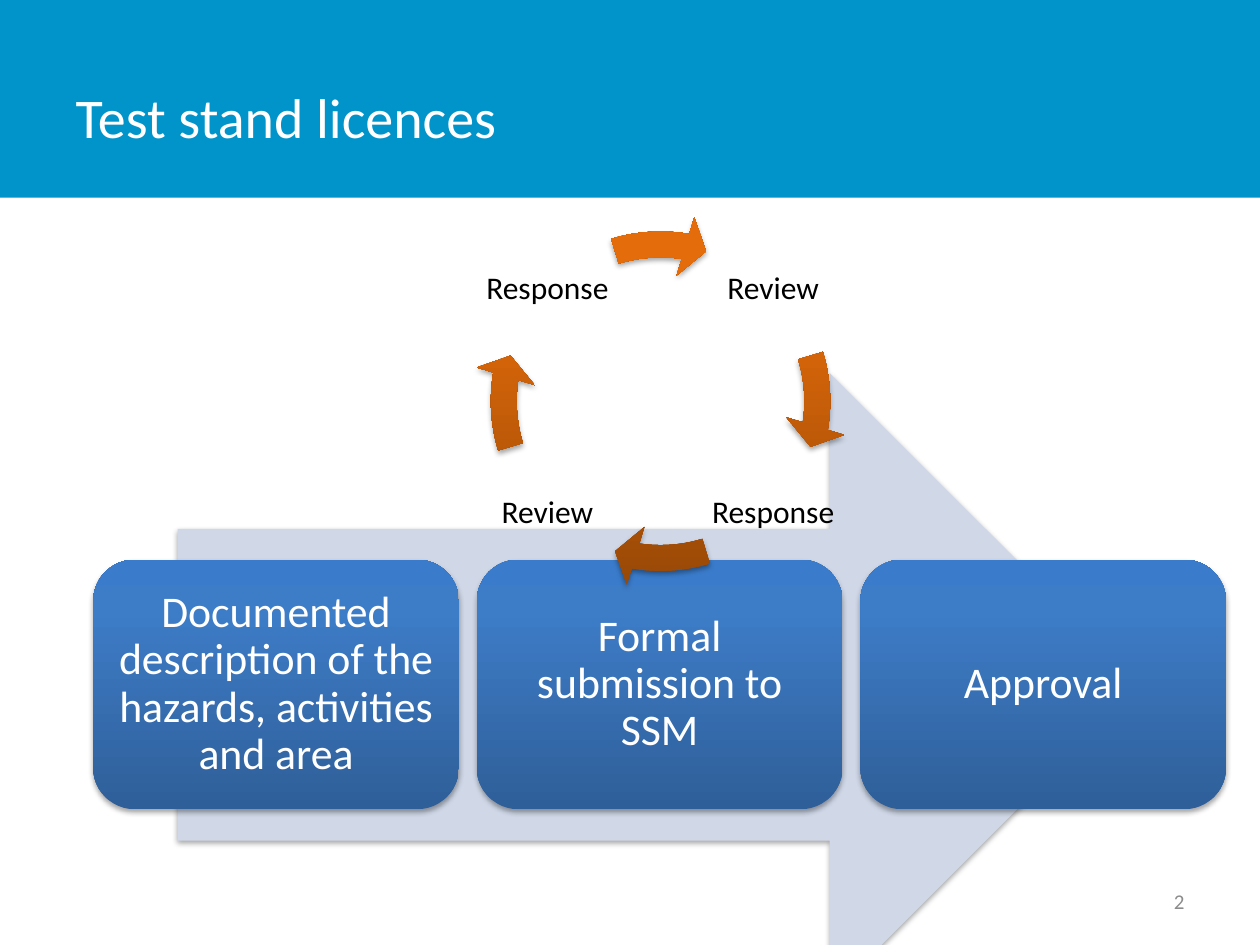
from lxml import etree
from pptx import Presentation
from pptx.dml.color import RGBColor
from pptx.enum.shapes import MSO_SHAPE
from pptx.enum.text import MSO_ANCHOR, PP_ALIGN
from pptx.util import Pt

RECT, ROUND = MSO_SHAPE.RECTANGLE, MSO_SHAPE.ROUNDED_RECTANGLE
ARROW, TURN = MSO_SHAPE.RIGHT_ARROW, MSO_SHAPE.CIRCULAR_ARROW
LEFT, MID, RIGHT = PP_ALIGN.LEFT, PP_ALIGN.CENTER, PP_ALIGN.RIGHT
NS = 'xmlns:a="http://schemas.openxmlformats.org/drawingml/2006/main"'
SHADE = f'''<a:effectLst {NS}><a:outerShdw blurRad="{Pt(3.1)}" dist="{Pt(1.8)}"
  dir="5400000" rotWithShape="0"><a:srgbClr val="000000"><a:alpha val="35000"/>
  </a:srgbClr></a:outerShdw></a:effectLst>'''
BLUE = ("2F5F99", "3D7CC7", "3A7CCB")
RUST = ("984807", "E46C0A", "E46C0A")
rgb = RGBColor.from_string


def paint(shape, hues):
    """Fill with an upward three-stop gradient or one colour, and add a shadow."""
    props = shape._element.spPr
    shape.line.fill.background()
    if len(hues) == 1:
        shape.fill.solid()
        shape.fill.fore_color.rgb = rgb(hues[0])
    else:
        stops = "".join(f'<a:gs pos="{pos}"><a:srgbClr val="{hue}"/></a:gs>'
                        for pos, hue in zip((0, 80000, 100000), hues))
        props.insert(2, etree.fromstring(
            f'<a:gradFill {NS} rotWithShape="1"><a:gsLst>{stops}</a:gsLst>'
            '<a:lin ang="16200000" scaled="0"/></a:gradFill>'))
    props.append(etree.fromstring(SHADE))


def write(shape, text, size, hue, align=MID, pad=7.2, lead=0.9):
    frame = shape.text_frame
    frame.text = text
    frame.word_wrap = True
    frame.vertical_anchor = MSO_ANCHOR.MIDDLE
    frame.margin_left = frame.margin_right = Pt(pad)
    frame.margin_top = frame.margin_bottom = Pt(min(pad, 7.2))
    para = frame.paragraphs[0]
    para.alignment = align
    para.line_spacing = lead
    para.font.name = "Calibri"
    para.font.size = Pt(size)
    para.font.color.rgb = rgb(hue)


deck = Presentation()
deck.slide_width, deck.slide_height = Pt(720), Pt(540)
slide = deck.slides.add_slide(deck.slide_layouts[5])
shapes = slide.shapes

# Title on its banner
band = shapes.add_shape(RECT, 0, 0, Pt(720), Pt(113))
band.shadow.inherit = False
band.fill.solid()
band.fill.fore_color.rgb = rgb("0094CA")
band.line.fill.background()
title = shapes.title
title.left, title.top, title.width, title.height = Pt(36), Pt(21.6), Pt(562.3), Pt(90)
write(title, "Test stand licences", 32, "FFFFFF", LEFT, lead=1)
title._element.addprevious(band._element)

# Process arrow behind the steps
flow = shapes.add_shape(ARROW, Pt(101.5), Pt(213.1), Pt(550.8), Pt(356.4))
paint(flow, ["D0D8E8"])

# Steps
steps = ["Documented description of the hazards, activities and area",
         "Formal submission to SSM", "Approval"]
for i, text in enumerate(steps):
    card = shapes.add_shape(ROUND, Pt(53.2 + 219.2 * i), Pt(319.8), Pt(209), Pt(142.6))
    paint(card, BLUE)
    write(card, text, 25, "FFFFFF")

# Slide number
num = shapes.add_textbox(Pt(516), Pt(500.5), Pt(168), Pt(28.75))
write(num, "2", 12, "8C8C8C", RIGHT, lead=1)

# Review cycle, clockwise from top right
spots = [(404, 127.4, "Review"), (404, 255.6, "Response"),
         (275, 255.6, "Review"), (275, 127.4, "Response")]
for i, (x, y, text) in enumerate(spots):
    label = shapes.add_textbox(Pt(x), Pt(y), Pt(75.6), Pt(75.6))
    write(label, text, 18, "000000", pad=2)
    turn = shapes.add_shape(TURN, Pt(270.6), Pt(122.4), Pt(213.8), Pt(213.8))
    # Angles count in 100000 / 60000 degree units, so a quarter turn is 54
    angles = (0.069, 4.656, 5.484 + 54 * i, (205.86 + 54 * i) % 216, 0.081)
    for k, value in enumerate(angles):
        turn.adjustments[k] = value
    paint(turn, RUST)

deck.save("out.pptx")
